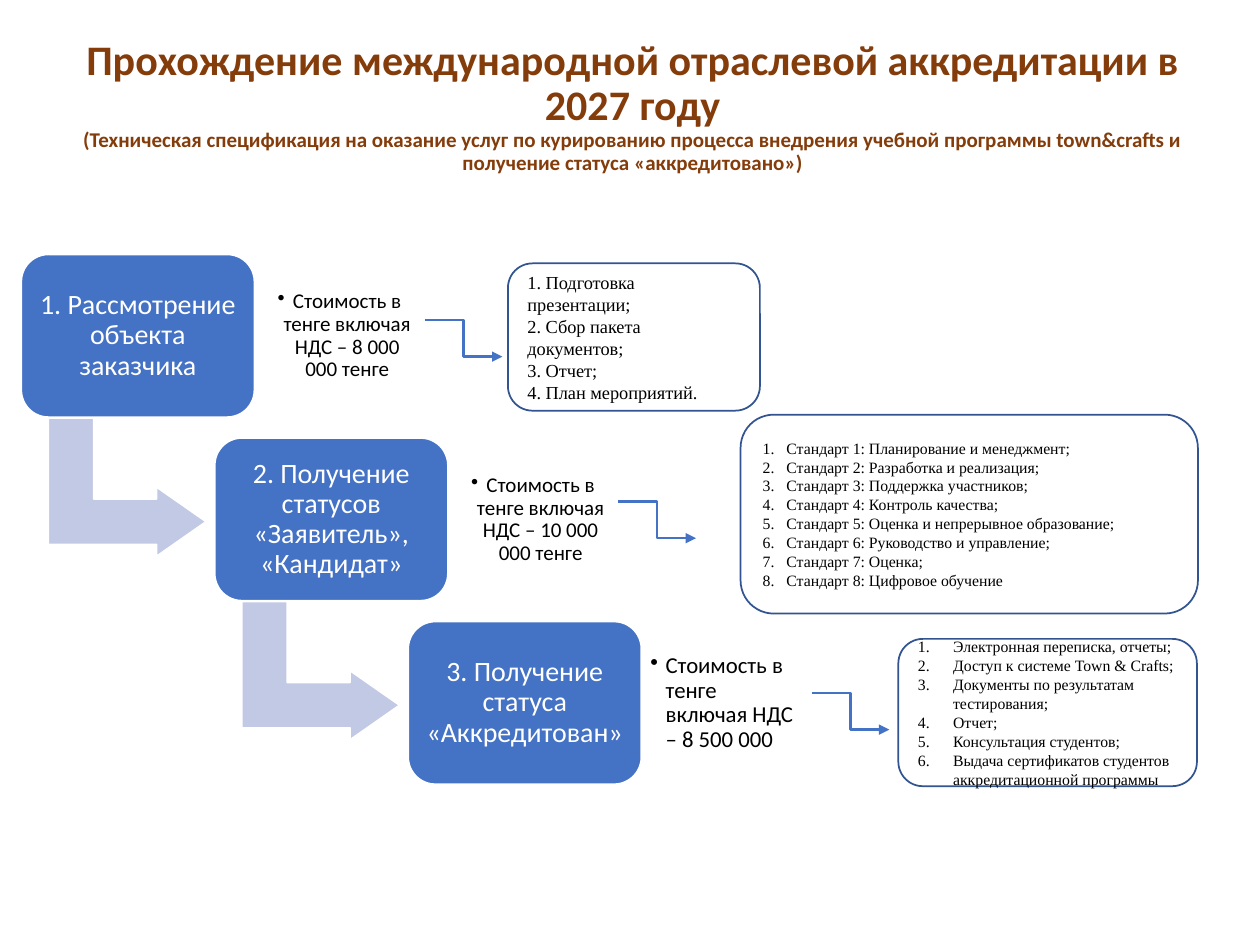
from dataclasses import dataclass

from lxml import etree
from pptx import Presentation
from pptx.dml.color import RGBColor
from pptx.enum.shapes import MSO_CONNECTOR, MSO_SHAPE
from pptx.enum.text import MSO_ANCHOR, PP_ALIGN
from pptx.oxml.ns import qn
from pptx.util import Cm, Pt

ROUNDED = MSO_SHAPE.ROUNDED_RECTANGLE
BENT_ARROW = MSO_SHAPE.BENT_UP_ARROW
ELBOW = MSO_CONNECTOR.ELBOW
MIDDLE = MSO_ANCHOR.MIDDLE
LEFT, CENTER = PP_ALIGN.LEFT, PP_ALIGN.CENTER


@dataclass(frozen=True)
class Theme:
    sans: str = "Calibri"
    serif: str = "Times New Roman"
    brown: RGBColor = RGBColor(0x84, 0x3C, 0x0B)
    blue: RGBColor = RGBColor(0x44, 0x72, 0xC4)
    outline: RGBColor = RGBColor(0x32, 0x54, 0x91)
    pale: RGBColor = RGBColor(0xC1, 0xC9, 0xE4)
    white: RGBColor = RGBColor(0xFF, 0xFF, 0xFF)
    black: RGBColor = RGBColor(0, 0, 0)
    title: float = 24
    subtitle: float = 12
    step: float = 16
    task: float = 10.5
    standard: float = 9


THEME = Theme()


def write(shape, lines, *, size, font=THEME.sans, color=THEME.black, bold=False,
          align=LEFT, spacing=1.0, margin=None, bullet=None, indent=0):
    """Fill a shape with paragraphs; bullet is a character or "auto" for numbers."""
    frame = shape.text_frame
    frame.word_wrap = True
    frame.vertical_anchor = MIDDLE
    if margin is not None:
        frame.margin_left = frame.margin_right = Cm(margin)
        frame.margin_top = frame.margin_bottom = Cm(margin)
    for number, line in enumerate(lines):
        paragraph = frame.paragraphs[0] if number == 0 else frame.add_paragraph()
        paragraph.text = line
        paragraph.alignment = align
        paragraph.line_spacing = spacing
        if bullet:
            properties = paragraph._p.get_or_add_pPr()
            properties.set("marL", str(Cm(indent)))
            properties.set("indent", str(-Cm(indent)))
            if bullet == "auto":
                etree.SubElement(properties, qn("a:buAutoNum"), type="arabicPeriod")
            else:
                etree.SubElement(properties, qn("a:buChar"), char=bullet)
        for run in paragraph.runs:
            run.font.name = font
            run.font.size = Pt(size)
            run.font.bold = bold
            run.font.color.rgb = color


def add_block(preset, left, top, width, height, *, fill=None, line=THEME.white):
    block = slide.shapes.add_shape(preset, Cm(left), Cm(top), Cm(width), Cm(height))
    block.shadow.inherit = False
    if fill is None:
        block.fill.background()
    else:
        block.fill.solid()
        block.fill.fore_color.rgb = fill
    block.line.color.rgb = line
    block.line.width = Pt(1)
    return block


deck = Presentation()
deck.slide_width, deck.slide_height = Cm(25.4), Cm(19.05)
slide = deck.slides.add_slide(deck.slide_layouts[6])

heading = slide.shapes.add_textbox(Cm(1.35), Cm(0.58), Cm(22.81), Cm(3.15))
write(heading, [
    "Прохождение международной отраслевой аккредитации в 2027 году\v"
    "(Техническая спецификация на оказание услуг по курированию процесса внедрения "
    "учебной программы town&crafts и получение статуса «аккредитовано»)",
], size=THEME.title, color=THEME.brown, bold=True, align=CENTER, spacing=0.9)
heading.text_frame.paragraphs[0].runs[1].font.size = Pt(THEME.subtitle)

# Staircase: stage name, cost, cost size, cost alignment, top of the link
STAGES = [
    ("1. Рассмотрение объекта заказчика",
     "Стоимость в тенге включая НДС – 8 000 000 тенге", 12, CENTER, 6.45),
    ("2. Получение статусов «Заявитель», «Кандидат»",
     "Стоимость в тенге включая НДС – 10 000 000 тенге", 12, CENTER, 10.11),
    ("3. Получение статуса «Аккредитован»",
     "Стоимость в тенге включая НДС – 8 500 000", 13, LEFT, 13.97),
]
STEP_X, STEP_Y = 3.9, 3.7

for index, (stage, cost, cost_size, cost_align, link_top) in enumerate(STAGES):
    x, y = index * STEP_X, index * STEP_Y

    if index < len(STAGES) - 1:
        descent = add_block(BENT_ARROW, x + 1.17, y + 8.23, 2.79, 3.18, fill=THEME.pale)
        descent.rotation = 90
        for position, value in enumerate((0.328, 0.25, 0.358)):
            descent.adjustments[position] = value

    stage_box = add_block(ROUNDED, x + 0.43, y + 5.13, 4.7, 3.28, fill=THEME.blue)
    write(stage_box, [stage], size=THEME.step, color=THEME.white, align=CENTER,
          spacing=0.9, margin=0.18)

    cost_box = slide.shapes.add_textbox(Cm(x + 5.13), Cm(y + 5.44), Cm(3.43), Cm(2.67))
    write(cost_box, [cost], size=cost_size, align=cost_align, spacing=0.9,
          margin=0.18, bullet="•", indent=0.31)

    link = slide.shapes.add_connector(ELBOW, Cm(x + 8.56), Cm(link_top),
                                      Cm(x + 10.13), Cm(link_top + 0.74))
    link.line.color.rgb = THEME.blue
    link.line.width = Pt(1.5)
    etree.SubElement(link.line._get_or_add_ln(), qn("a:tailEnd"), type="triangle")
    etree.SubElement(link._element.spPr, qn("a:effectLst"))

# Results: left, top, width, height, text size, bullet, indent, lines
RESULTS = [
    (10.24, 5.31, 5.08, 2.97, THEME.task, None, 0, [
        "1. Подготовка презентации;",
        "2. Сбор пакета документов;",
        "3. Отчет;",
        "4. План мероприятий.",
    ]),
    (14.93, 8.36, 9.22, 4.01, THEME.standard, "auto", 0.48, [
        "Стандарт 1: Планирование и менеджмент;",
        "Стандарт 2: Разработка и реализация;",
        "Стандарт 3: Поддержка участников;",
        "Стандарт 4: Контроль качества;",
        "Стандарт 5: Оценка и непрерывное образование;",
        "Стандарт 6: Руководство и управление;",
        "Стандарт 7: Оценка;",
        "Стандарт 8: Цифровое обучение",
    ]),
    (18.11, 12.88, 6.02, 2.97, THEME.standard, "auto", 0.71, [
        "Электронная переписка, отчеты;",
        "Доступ к системе Town & Crafts;",
        "Документы по результатам тестирования;",
        "Отчет;",
        "Консультация студентов;",
        "Выдача сертификатов студентов аккредитационной программы",
    ]),
]

for left, top, width, height, size, bullet, indent, lines in RESULTS:
    result = add_block(ROUNDED, left, top, width, height, line=THEME.outline)
    write(result, lines, size=size, font=THEME.serif, bullet=bullet, indent=indent)

deck.save("out.pptx")
